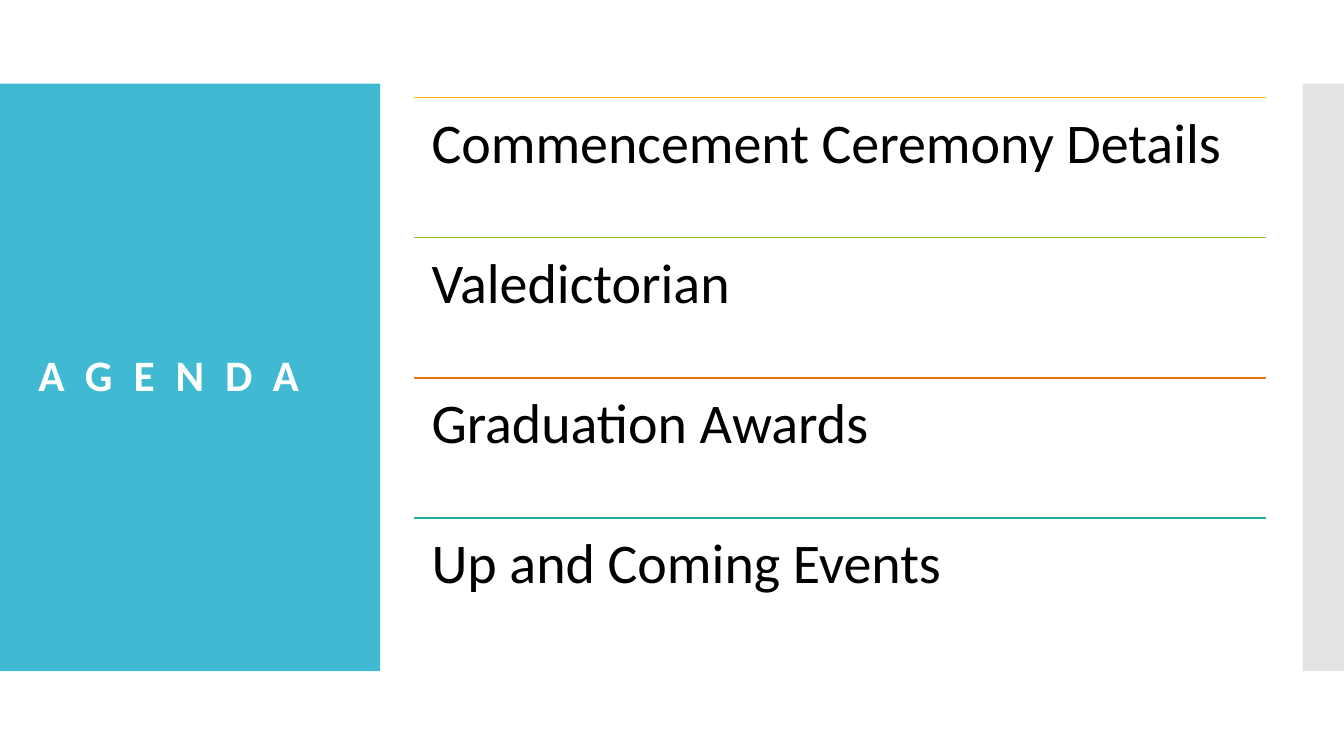
from dataclasses import dataclass

from lxml.etree import SubElement
from pptx import Presentation
from pptx.dml.color import RGBColor
from pptx.enum.shapes import MSO_CONNECTOR, MSO_SHAPE
from pptx.enum.text import MSO_ANCHOR, MSO_AUTO_SIZE, PP_ALIGN
from pptx.oxml.ns import qn
from pptx.shapes.autoshape import Shape
from pptx.slide import Slide
from pptx.util import Inches, Pt

FONT = "Calibri"
BAND_TOP, BAND_HEIGHT = 0.83, 5.83
AGENDA_LEFT, AGENDA_TOP = 4.11, 0.97
AGENDA_WIDTH, ROW_HEIGHT = 8.45, 1.39
TEXT_MARGIN = 0.17


@dataclass(frozen=True)
class Panel:
    left: float
    width: float
    fill: str
    opacity: int = 100


@dataclass(frozen=True)
class AgendaItem:
    text: str
    line_color: str


PANELS = [
    Panel(0, 3.77, "40BAD2"),
    Panel(12.92, 0.42, "C8C8C8", opacity=50),
]

AGENDA = [
    AgendaItem("Commencement Ceremony Details", "FAB900"),
    AgendaItem("Valedictorian", "90BB23"),
    AgendaItem("Graduation Awards", "EE7008"),
    AgendaItem("Up and Coming Events", "1AB39F"),
]


def color(value: str) -> RGBColor:
    return RGBColor.from_string(value)


def add_panel(slide: Slide, panel: Panel) -> Shape:
    shape = slide.shapes.add_shape(
        MSO_SHAPE.RECTANGLE,
        Inches(panel.left), Inches(BAND_TOP),
        Inches(panel.width), Inches(BAND_HEIGHT),
    )
    shape.shadow.inherit = False
    shape.fill.solid()
    shape.fill.fore_color.rgb = color(panel.fill)
    shape.line.fill.background()
    if panel.opacity < 100:
        fill_color = shape.element.spPr.find(f"{qn('a:solidFill')}/{qn('a:srgbClr')}")
        SubElement(fill_color, qn("a:alpha"), val=str(panel.opacity * 1000))
    return shape


def format_title(title: Shape) -> None:
    title.left, title.top = Inches(0.28), Inches(1.23)
    title.width, title.height = Inches(3.22), Inches(5.03)
    frame = title.text_frame
    frame.text = "AGENDA"
    frame.word_wrap = True
    frame.auto_size = MSO_AUTO_SIZE.NONE
    frame.vertical_anchor = MSO_ANCHOR.MIDDLE
    paragraph = frame.paragraphs[0]
    paragraph.alignment = PP_ALIGN.LEFT
    paragraph.line_spacing = 0.9
    paragraph.font.name = FONT
    paragraph.font.size = Pt(31)
    paragraph.font.bold = True
    paragraph.font.color.rgb = color("FFFFFF")
    paragraph.runs[0].font._element.set("spc", "1500")


def add_agenda_item(slide: Slide, item: AgendaItem, top: float) -> None:
    line = slide.shapes.add_connector(
        MSO_CONNECTOR.STRAIGHT,
        Inches(AGENDA_LEFT), Inches(top),
        Inches(AGENDA_LEFT + AGENDA_WIDTH), Inches(top),
    )
    line.line.color.rgb = color(item.line_color)
    line.line.width = Pt(0.85)
    SubElement(line.element.spPr, qn("a:effectLst"))

    box = slide.shapes.add_textbox(
        Inches(AGENDA_LEFT), Inches(top), Inches(AGENDA_WIDTH), Inches(ROW_HEIGHT)
    )
    frame = box.text_frame
    frame.word_wrap = True
    frame.margin_left = frame.margin_right = Inches(TEXT_MARGIN)
    frame.margin_top = frame.margin_bottom = Inches(TEXT_MARGIN)
    frame.text = item.text
    paragraph = frame.paragraphs[0]
    paragraph.line_spacing = 0.9
    paragraph.font.name = FONT
    paragraph.font.size = Pt(40)
    paragraph.font.color.rgb = color("000000")


def main() -> None:
    presentation = Presentation()
    presentation.slide_width = Inches(13.33)
    presentation.slide_height = Inches(7.5)
    slide = presentation.slides.add_slide(presentation.slide_layouts[5])

    title = slide.shapes.title
    format_title(title)
    for panel in PANELS:
        title.element.addprevious(add_panel(slide, panel).element)
    for row, item in enumerate(AGENDA):
        add_agenda_item(slide, item, AGENDA_TOP + row * ROW_HEIGHT)

    presentation.save("out.pptx")


if __name__ == "__main__":
    main()
